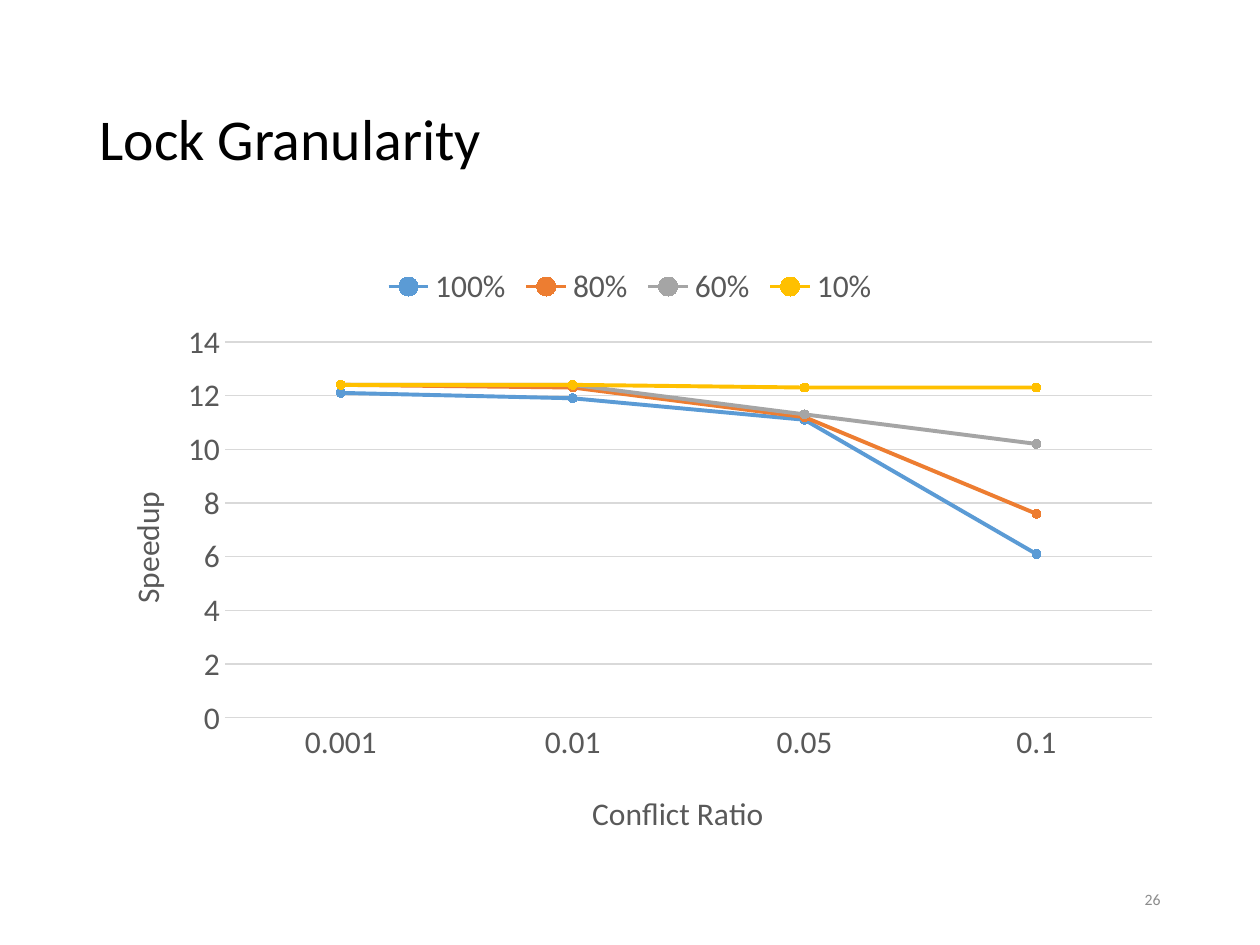
from dataclasses import dataclass

from lxml import etree
from pptx import Presentation
from pptx import util as u
from pptx.chart import data as cd
from pptx.dml import color as dc
from pptx.enum import chart as ce
from pptx.enum import text as te
from pptx.oxml import ns


@dataclass(frozen=True)
class Theme:
    face: str = "Calibri"
    ink: str = "000000"
    label: str = "595959"
    faint: str = "8C8C8C"
    grid: str = "D9D9D9"
    hues: tuple = ("5B9BD5", "ED7D31", "A5A5A5", "FFC000")
    head: float = 33
    body: float = 18
    small: float = 9
    thin: float = 0.75
    thick: float = 2.25
    dot: int = 5


THEME = Theme()
RATIOS = ("0.001", "0.01", "0.05", "0.1")
SPEEDUPS = {
    "100%": (12.1, 11.9, 11.1, 6.1),
    "80%": (12.4, 12.3, 11.2, 7.6),
    "60%": (12.4, 12.4, 11.3, 10.2),
    "10%": (12.4, 12.4, 12.3, 12.3),
}


def apply(item, values):
    for name, value in values.items():
        setattr(item, name, value)


def style(font, size, hue):
    apply(font, {"name": THEME.face, "size": u.Pt(size), "bold": False})
    font.color.rgb = dc.RGBColor.from_string(hue)


def stroke(line, hue, width):
    line.color.rgb = dc.RGBColor.from_string(hue)
    line.width = u.Pt(width)


def place(node, index, spots):
    for old in node.findall(ns.qn("c:layout")):
        node.remove(old)
    layout = etree.Element(ns.qn("c:layout"))
    manual = etree.SubElement(layout, ns.qn("c:manualLayout"))
    for tag, value in spots.items():
        etree.SubElement(manual, ns.qn(f"c:{tag}")).set("val", str(value))
    node.insert(index, layout)


def add_label(slide, box, words, size, hue, align):
    frame = slide.shapes.add_textbox(*map(u.Inches, box)).text_frame
    apply(frame, {"word_wrap": True, "vertical_anchor": te.MSO_ANCHOR.MIDDLE})
    para = frame.paragraphs[0]
    apply(para, {"text": words, "alignment": align, "line_spacing": 0.9})
    style(para.runs[0].font, size, hue)


def set_axis(axis, title, left, top):
    apply(axis, {"major_tick_mark": ce.XL_TICK_MARK.NONE,
                 "minor_tick_mark": ce.XL_TICK_MARK.NONE})
    style(axis.tick_labels.font, THEME.body, THEME.label)
    frame = axis.axis_title.text_frame
    frame.text = title
    style(frame.paragraphs[0].runs[0].font, THEME.body, THEME.label)
    place(axis.axis_title._element, 1,
          {"xMode": "edge", "yMode": "edge", "x": left, "y": top})


def add_graph(slide, box):
    data = cd.CategoryChartData(number_format="0.0")
    data.categories = RATIOS
    for name, values in SPEEDUPS.items():
        data.add_series(name, values)
    chart = slide.shapes.add_chart(
        ce.XL_CHART_TYPE.LINE_MARKERS, *map(u.Inches, box), data).chart
    style(chart.font, THEME.body, THEME.ink)
    apply(chart, {"has_title": False, "has_legend": True})
    apply(chart.legend, {"position": ce.XL_LEGEND_POSITION.TOP,
                         "include_in_layout": False})
    style(chart.legend.font, THEME.body, THEME.label)

    ratio, speed = chart.category_axis, chart.value_axis
    set_axis(ratio, "Conflict Ratio", 0.46, 0.89)
    set_axis(speed, "Speedup", 0.03, 0.39)
    stroke(ratio.format.line, THEME.grid, THEME.thin)
    apply(speed, {"minimum_scale": 0, "maximum_scale": 14, "major_unit": 2,
                  "has_major_gridlines": True})
    speed.tick_labels.number_format = "General"
    speed.tick_labels.number_format_is_linked = False
    speed.format.line.fill.background()
    stroke(speed.major_gridlines.format.line, THEME.grid, THEME.thin)

    plot = chart.plots[0]
    plot.vary_by_categories = False
    for line, hue in zip(plot.series, THEME.hues):
        line.smooth = False
        stroke(line.format.line, hue, THEME.thick)
        apply(line.marker, {"style": ce.XL_MARKER_STYLE.CIRCLE,
                            "size": THEME.dot})
        fill = line.marker.format.fill
        fill.solid()
        fill.fore_color.rgb = dc.RGBColor.from_string(hue)
        stroke(line.marker.format.line, hue, THEME.thin)
    area = chart._chartSpace.find(".//" + ns.qn("c:plotArea"))
    place(area, 0, {"layoutTarget": "inner", "xMode": "edge", "yMode": "edge",
                    "x": 0.127, "y": 0.15, "w": 0.854, "h": 0.627})


def main():
    deck = Presentation()
    apply(deck, {"slide_width": u.Inches(10), "slide_height": u.Inches(7.5)})
    slide = deck.slides.add_slide(deck.slide_layouts[6])
    add_label(slide, (0.69, 0.4, 8.62, 1.45), "Lock Granularity",
              THEME.head, THEME.ink, te.PP_ALIGN.LEFT)
    add_graph(slide, (0.69, 2, 8.62, 4.76))
    add_label(slide, (7.06, 6.95, 2.25, 0.4), "26",
              THEME.small, THEME.faint, te.PP_ALIGN.RIGHT)
    deck.save("out.pptx")


if __name__ == "__main__":
    main()
